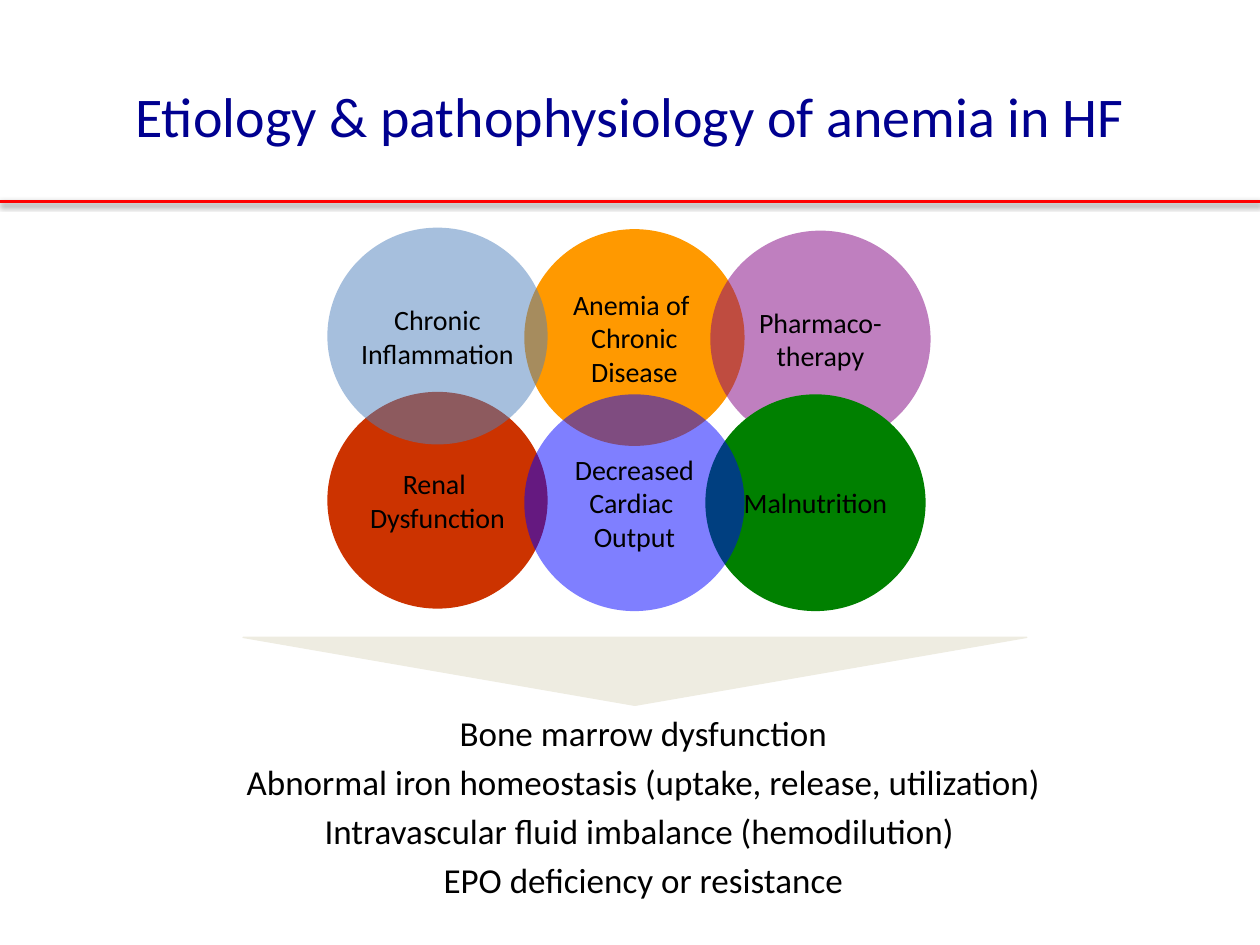
from lxml import etree
from pptx import Presentation
from pptx.dml.color import RGBColor
from pptx.enum.shapes import MSO_CONNECTOR, MSO_SHAPE
from pptx.enum.text import MSO_ANCHOR, MSO_AUTO_SIZE, PP_ALIGN
from pptx.oxml.ns import qn
from pptx.util import Cm, Pt

CENTER = PP_ALIGN.CENTER
MIDDLE = MSO_ANCHOR.MIDDLE
NO_AUTOFIT = MSO_AUTO_SIZE.NONE
ELLIPSE = MSO_SHAPE.OVAL
MERGE = MSO_SHAPE.FLOWCHART_MERGE
STRAIGHT = MSO_CONNECTOR.STRAIGHT

BLACK = RGBColor(0x00, 0x00, 0x00)
NAVY = RGBColor(0x00, 0x00, 0x90)
RED = RGBColor(0xFF, 0x00, 0x00)
ORANGE = RGBColor(0xFF, 0x99, 0x00)
PURPLE = RGBColor(0x80, 0x00, 0x80)
RUST = RGBColor(0xCC, 0x33, 0x00)
GREEN = RGBColor(0x00, 0x80, 0x00)
BLUE = RGBColor(0x00, 0x00, 0xFF)
STEEL = RGBColor(0x4F, 0x81, 0xBD)
CREAM = RGBColor(0xEE, 0xEC, 0xE1)

FONT = "Calibri"


def write_lines(frame, lines, size, color):
    """Fill a text frame with centred paragraphs of one format."""
    frame.text = "\n".join(lines)
    for paragraph in frame.paragraphs:
        paragraph.alignment = CENTER
        paragraph.font.name = FONT
        paragraph.font.size = Pt(size)
        paragraph.font.color.rgb = color


def place(shape, left, top, width, height):
    shape.left, shape.top = Cm(left), Cm(top)
    shape.width, shape.height = Cm(width), Cm(height)


prs = Presentation()
prs.slide_width, prs.slide_height = Cm(25.4), Cm(19.05)
slide = prs.slides.add_slide(prs.slide_layouts[1])

# Title
title = slide.shapes.title
place(title, 0, 1.07, 25.4, 2.49)
title.text_frame.auto_size = NO_AUTOFIT
title.text_frame.vertical_anchor = MIDDLE
write_lines(title.text_frame, ["Etiology & pathophysiology of anemia in HF"], 32, NAVY)

# Consequences
consequences = slide.placeholders[1]
place(consequences, 2.26, 14.22, 21.11, 5.54)
consequences.text_frame.auto_size = NO_AUTOFIT
write_lines(consequences.text_frame, [
    "Bone marrow dysfunction",
    "Abnormal iron homeostasis (uptake, release, utilization)",
    "Intravascular fluid imbalance (hemodilution) ",
    "EPO deficiency or resistance",
], 20, BLACK)
for paragraph in consequences.text_frame.paragraphs:
    properties = paragraph._p.get_or_add_pPr()
    properties.set("marL", str(Cm(0.97)))
    properties.set("indent", str(Cm(-0.66)))
    etree.SubElement(properties, qn("a:buNone"))

# Overlapping causes, back to front: left, top, colour, opacity in percent, lines
causes = [
    (10.57, 4.62, ORANGE, 100, ["Anemia of ", "Chronic", "Disease"]),
    (14.32, 4.65, PURPLE, 50, ["Pharmaco-", "therapy"]),
    (6.6, 7.9, RUST, 100, ["Renal ", "Dysfunction"]),
    (14.22, 7.95, GREEN, 100, ["Malnutrition"]),
    (10.57, 7.95, BLUE, 50, ["Decreased", "Cardiac ", "Output"]),
    (6.6, 4.59, STEEL, 50, ["Chronic", "Inflammation"]),
]
cause_group = slide.shapes.add_group_shape()
for left, top, color, opacity, lines in causes:
    cause = cause_group.shapes.add_shape(ELLIPSE, Cm(left), Cm(top), Cm(4.44), Cm(4.37))
    cause.shadow.inherit = False
    cause.fill.solid()
    cause.fill.fore_color.rgb = color
    cause.line.fill.background()
    if opacity < 100:
        fill_color = cause._element.spPr.find(qn("a:solidFill"))[0]
        etree.SubElement(fill_color, qn("a:alpha"), val=str(opacity * 1000))
    cause.text_frame.word_wrap = False
    cause.text_frame.vertical_anchor = MIDDLE
    write_lines(cause.text_frame, lines, 16, BLACK)

# Funnel from causes to consequences
funnel = slide.shapes.add_shape(MERGE, Cm(4.9), Cm(12.85), Cm(15.8), Cm(1.37))
funnel.shadow.inherit = False
funnel.fill.solid()
funnel.fill.fore_color.rgb = CREAM
funnel.line.color.rgb = CREAM
funnel.line.width = Pt(0.75)

# Rule under the title, with a soft shadow below it
rule = slide.shapes.add_connector(STRAIGHT, Cm(0), Cm(4.06), Cm(25.4), Cm(4.06))
rule.line.color.rgb = RED
rule.line.width = Pt(2)
effects = etree.SubElement(rule._element.spPr, qn("a:effectLst"))
shadow = etree.SubElement(effects, qn("a:outerShdw"), blurRad=str(Pt(3.1)),
                          dist=str(Pt(1.6)), dir="5400000", rotWithShape="0")
shadow_color = etree.SubElement(shadow, qn("a:srgbClr"), val=str(BLACK))
etree.SubElement(shadow_color, qn("a:alpha"), val="38000")

prs.save("out.pptx")
